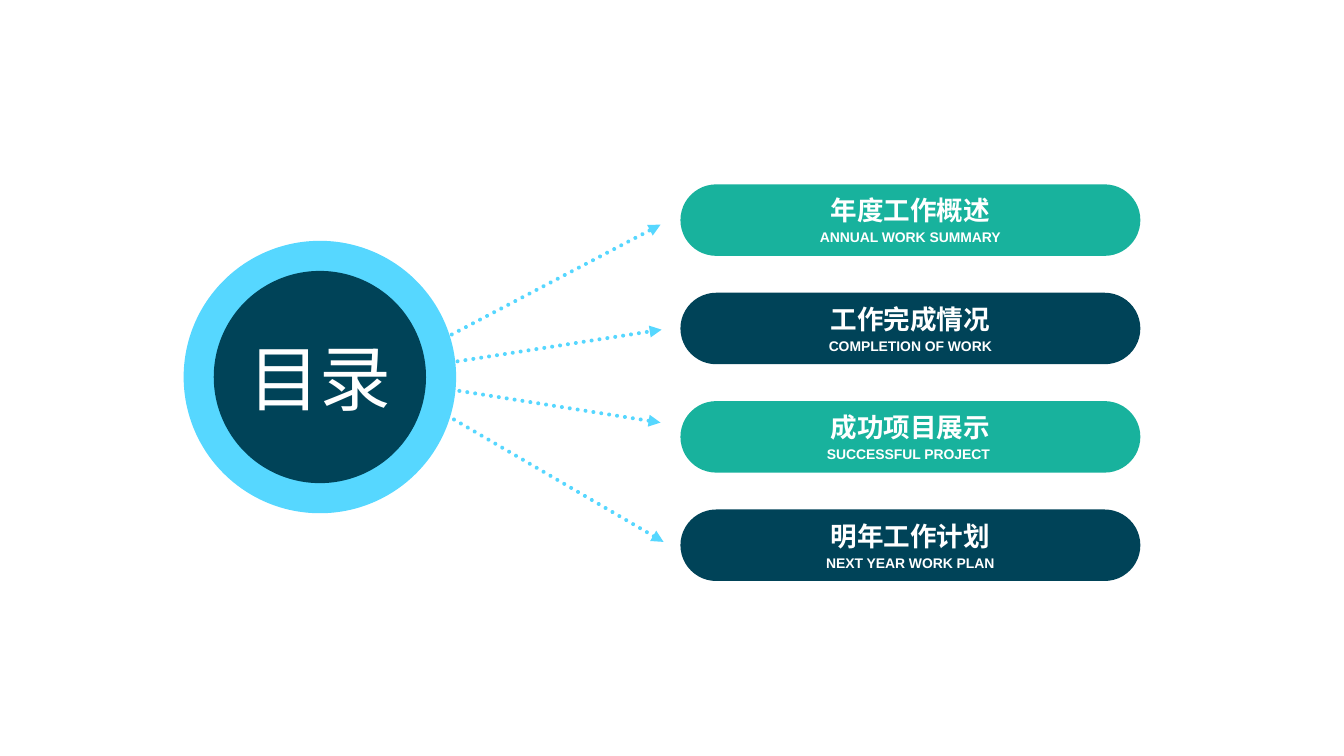
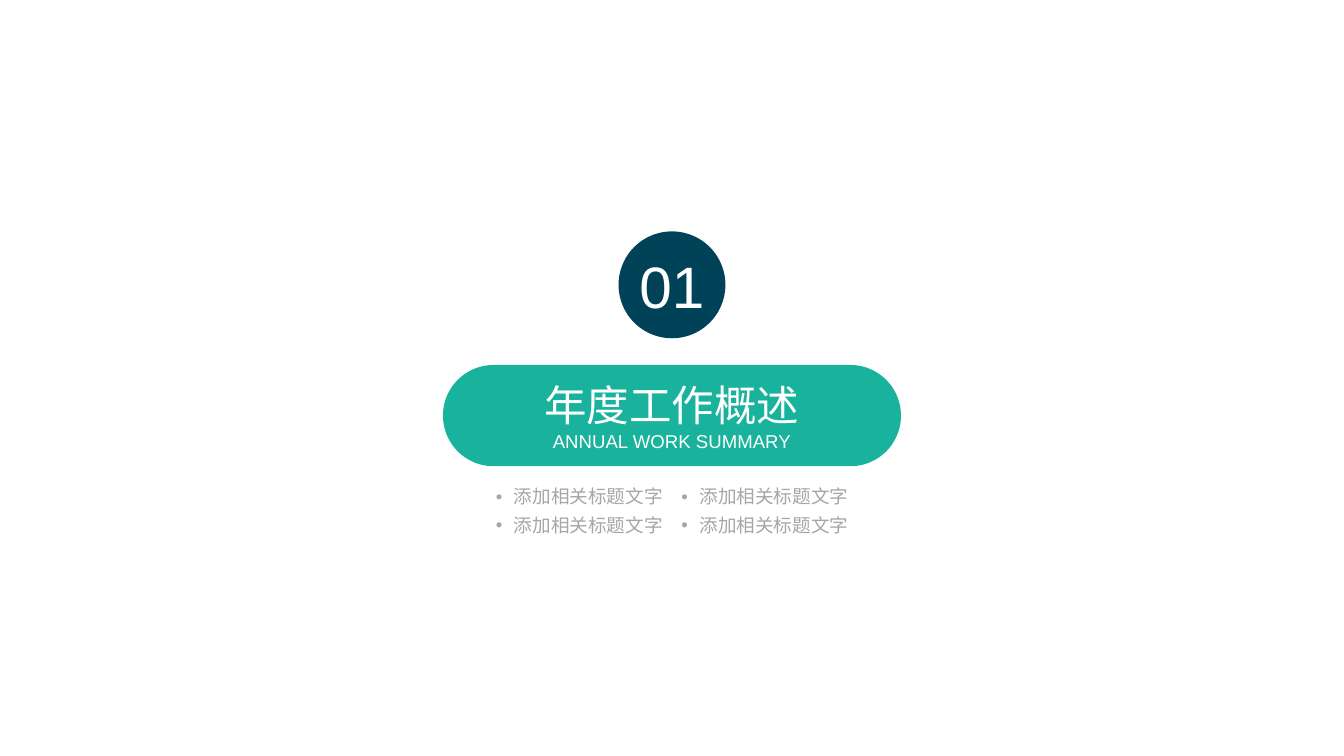
"""Build a contents slide and a chapter slide that share one style."""
from dataclasses import dataclass
from itertools import product

from lxml import etree
from pptx import Presentation
from pptx import util as u
from pptx.dml.color import RGBColor
from pptx.enum import dml, lang, shapes, text
from pptx.oxml import ns

COLOURS = {
    "navy": "004358",
    "teal": "18B29D",
    "sky": "56D7FF",
    "white": "FFFFFF",
    "grey": "A6A6A6",
}
FONT = "Arial"
SLIDE_WIDTH, SLIDE_HEIGHT = 35.71, 20.09


@dataclass(frozen=True)
class Box:
    left: float
    top: float
    width: float
    height: float


@dataclass(frozen=True)
class Line:
    content: str
    size: float
    bold: bool = False
    space_before: float = 0
    colour: str = "white"
    chinese: bool = False


@dataclass(frozen=True)
class Chapter:
    title: str
    subtitle: str


@dataclass(frozen=True)
class Arrow:
    start: tuple[float, float]
    end: tuple[float, float]


CHAPTERS = (
    Chapter("年度工作概述", "ANNUAL WORK SUMMARY"),
    Chapter("工作完成情况", "COMPLETION OF WORK"),
    Chapter("成功项目展示", "SUCCESSFUL PROJECT "),
    Chapter("明年工作计划", "NEXT YEAR WORK PLAN"),
)
ARROWS = (
    Arrow((10.69, 9.58), (17.55, 5.97)),
    Arrow((10.69, 9.83), (17.58, 8.76)),
    Arrow((10.95, 10.19), (17.55, 11.23)),
    Arrow((11.33, 10.72), (17.63, 14.4)),
)


def colour(name: str) -> RGBColor:
    """Look up a colour by name."""
    return RGBColor.from_string(COLOURS[name])


def place(box: Box) -> tuple[u.Length, ...]:
    """Turn a box into lengths."""
    return u.Cm(box.left), u.Cm(box.top), u.Cm(box.width), u.Cm(box.height)


def write_lines(shape, lines: tuple[Line, ...]) -> None:
    """Fill a shape with centred lines, one paragraph each."""
    frame = shape.text_frame
    frame.margin_left = frame.margin_right = 0
    frame.margin_top = frame.margin_bottom = 0
    frame.text = "\n".join(line.content for line in lines)
    for paragraph, line in zip(frame.paragraphs, lines):
        paragraph.alignment = text.PP_ALIGN.CENTER
        paragraph.space_before = u.Pt(line.space_before)
        for run in paragraph.runs:
            run.font.name = FONT
            run.font.size = u.Pt(line.size)
            run.font.bold = line.bold
            run.font.color.rgb = colour(line.colour)
            if line.chinese:
                run.font.language_id = lang.MSO_LANGUAGE_ID.SIMPLIFIED_CHINESE


def add_filled(slide, kind, box: Box, fill: str, lines: tuple[Line, ...] = ()):
    """Add a flat shape with optional text in its middle."""
    shape = slide.shapes.add_shape(kind, *place(box))
    shape.shadow.inherit = False
    shape.fill.solid()
    shape.fill.fore_color.rgb = colour(fill)
    shape.line.fill.background()
    if lines:
        write_lines(shape, lines)
        shape.text_frame.vertical_anchor = text.MSO_ANCHOR.MIDDLE
    return shape


def add_pill(slide, box: Box, fill: str, lines: tuple[Line, ...]) -> None:
    """Add a fully rounded bar."""
    pill = add_filled(slide, shapes.MSO_SHAPE.ROUNDED_RECTANGLE, box, fill, lines)
    pill.adjustments[0] = 0.5


def add_disc(slide, centre: tuple[float, float], diameter: float, fill: str,
             lines: tuple[Line, ...] = ()) -> None:
    """Add a circle around a centre."""
    left, top = (position - diameter / 2 for position in centre)
    box = Box(left, top, diameter, diameter)
    add_filled(slide, shapes.MSO_SHAPE.OVAL, box, fill, lines)


def add_arrow(slide, arrow: Arrow) -> None:
    """Add a dotted arrow."""
    points = (u.Cm(value) for value in (*arrow.start, *arrow.end))
    connector = slide.shapes.add_connector(shapes.MSO_CONNECTOR.STRAIGHT, *points)
    connector.line.color.rgb = colour("sky")
    connector.line.width = u.Pt(3)
    connector.line.dash_style = dml.MSO_LINE.ROUND_DOT
    properties = connector.element.spPr
    outline = properties.find(ns.qn("a:ln"))
    outline.set("cap", "rnd")
    etree.SubElement(outline, ns.qn("a:tailEnd"), type="triangle")
    etree.SubElement(properties, ns.qn("a:effectLst"))


def add_bullet(slide, box: Box, content: str) -> None:
    """Add a one-line bulleted caption."""
    caption = slide.shapes.add_textbox(*place(box))
    write_lines(caption, (Line(content, 14, colour="grey", chinese=True),))
    caption.text_frame.word_wrap = False
    caption.text_frame.auto_size = text.MSO_AUTO_SIZE.SHAPE_TO_FIT_TEXT
    properties = caption.text_frame.paragraphs[0]._p.get_or_add_pPr()
    indent = u.Cm(0.48)
    properties.set("marL", str(indent))
    properties.set("indent", str(-indent))
    etree.SubElement(properties, ns.qn("a:buFont"), typeface=FONT)
    etree.SubElement(properties, ns.qn("a:buChar"), char="•")


def build_contents(slide) -> None:
    """Draw the hub, its arrows and one bar per chapter."""
    for arrow in ARROWS:
        add_arrow(slide, arrow)
    for index, chapter in enumerate(CHAPTERS):
        add_pill(
            slide,
            Box(18.08, 4.9 + 2.88 * index, 12.22, 1.9),
            ("teal", "navy")[index % 2],
            (Line(chapter.title, 20, True, 4, chinese=True),
             Line(chapter.subtitle, 10.5, True, 2.1)),
        )
    hub = (8.5, 10.02)
    add_disc(slide, hub, 7.24, "sky")
    add_disc(slide, hub, 5.64, "navy", (Line("目录", 54, chinese=True),))


def build_chapter(slide, number: int, chapter: Chapter) -> None:
    """Draw a chapter number, its title bar and a grid of captions."""
    middle = SLIDE_WIDTH / 2
    pill_width = 12.17
    add_pill(
        slide,
        Box(middle - pill_width / 2, 9.7, pill_width, 2.69),
        "teal",
        (Line(chapter.title, 32, chinese=True), Line(chapter.subtitle, 14)),
    )
    add_disc(slide, (middle, 7.57), 2.84, "navy", (Line(f"{number:02}", 44),))
    for row, column in product(range(2), repeat=2):
        box = Box(13.16 + 4.93 * column, 12.9 + 0.75 * row, 4.47, 0.61)
        add_bullet(slide, box, "添加相关标题文字")


def main() -> None:
    """Build and save the presentation."""
    presentation = Presentation()
    presentation.slide_width = u.Cm(SLIDE_WIDTH)
    presentation.slide_height = u.Cm(SLIDE_HEIGHT)
    blank = presentation.slide_layouts[6]
    build_contents(presentation.slides.add_slide(blank))
    build_chapter(presentation.slides.add_slide(blank), 1, CHAPTERS[0])
    presentation.save("out.pptx")


if __name__ == "__main__":
    main()
